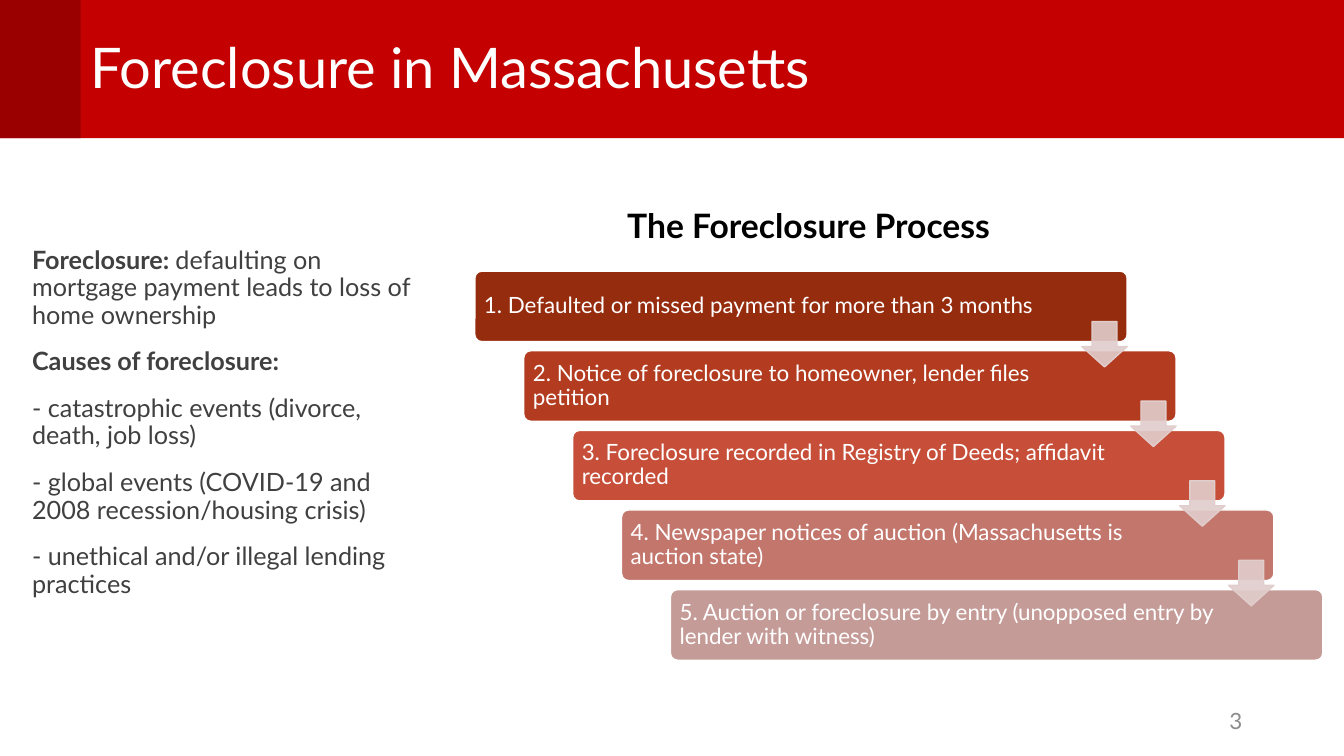
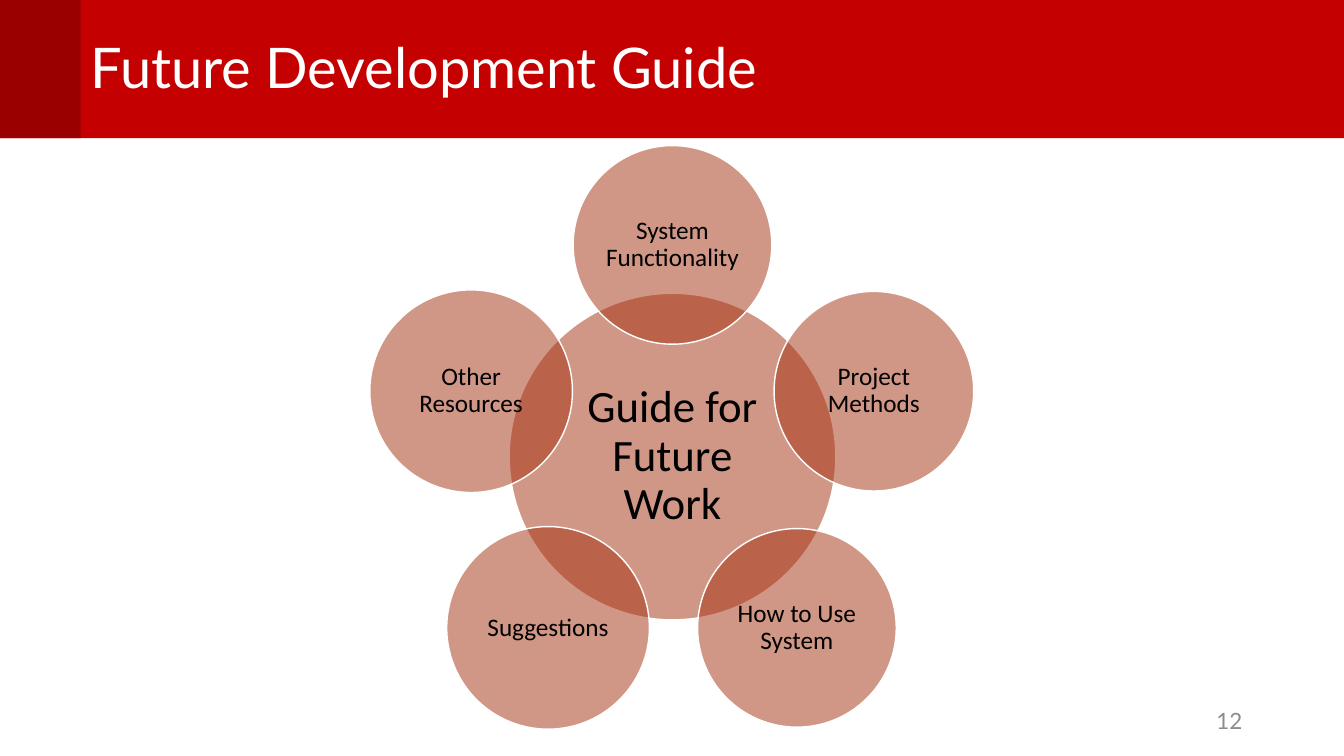
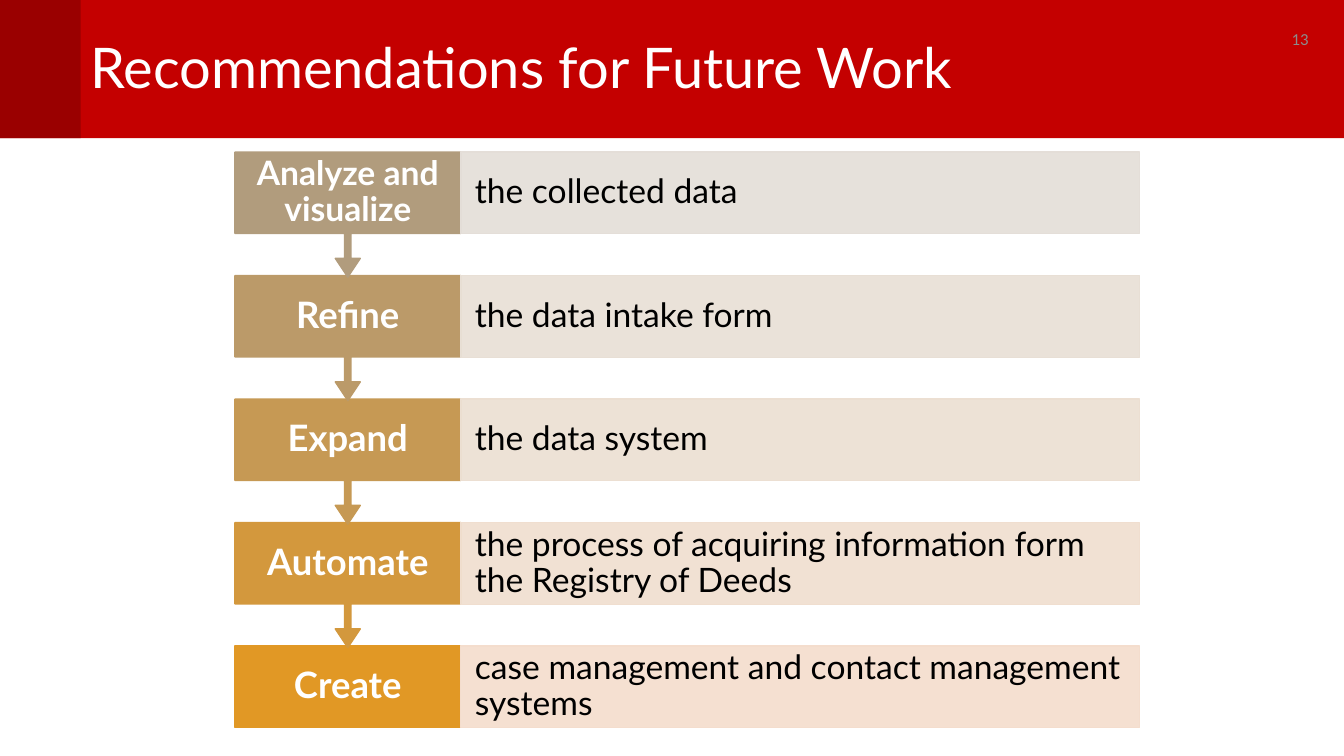
import math
from dataclasses import dataclass

from lxml import etree
from pptx import Presentation
from pptx import util as u
from pptx.dml.color import RGBColor
from pptx.enum import shapes, text
from pptx.oxml import ns
from pptx.shapes.autoshape import Shape
from pptx.slide import Slide
from pptx.util import Inches

COLORS = {
    "band": "C40000",
    "band_corner": "9A0000",
    "white": "FFFFFF",
    "black": "000000",
    "body": "404040",
    "number": "8C8C8C",
    "step_arrow": "E1CDCC",
    "circle": "A5300F",
}
SHAPE = shapes.MSO_SHAPE
LEFT, CENTER, RIGHT = text.PP_ALIGN.LEFT, text.PP_ALIGN.CENTER, text.PP_ALIGN.RIGHT
MIDDLE, TOP = text.MSO_ANCHOR.MIDDLE, text.MSO_ANCHOR.TOP


@dataclass(frozen=True)
class Box:
    left: float
    top: float
    width: float
    height: float

    def lengths(self) -> list[int]:
        return [Inches(v) for v in (self.left, self.top, self.width, self.height)]


@dataclass(frozen=True)
class TextStyle:
    size: float
    color: str = COLORS["black"]
    font: str = "Lato"
    bold: bool = False
    align: text.PP_ALIGN = LEFT
    anchor: text.MSO_ANCHOR = MIDDLE
    line_spacing: float = 0.9
    margins: tuple[float, float, float, float] = (0.1, 0.05, 0.1, 0.05)


@dataclass(frozen=True)
class Step:
    label: str
    fill: str


@dataclass(frozen=True)
class Topic:
    label: str
    diameter: float


@dataclass(frozen=True)
class Recommendation:
    verb: str
    detail: str
    verb_fill: str
    detail_fill: str
    verb_size: float = 26


TITLE = TextStyle(40, COLORS["white"])
NUMBER = TextStyle(16, COLORS["number"], align=RIGHT, line_spacing=1)
NUMBER_BOX = Box(9.42, 6.95, 3, 0.4)


# Shared helpers
def format_run(run, style: TextStyle, bold: bool) -> None:
    run.font.size = u.Pt(style.size)
    run.font.name = style.font
    run.font.bold = bold
    run.font.color.rgb = RGBColor.from_string(style.color)


def set_frame(shape: Shape, style: TextStyle):
    frame = shape.text_frame
    frame.word_wrap = True
    frame.vertical_anchor = style.anchor
    (frame.margin_left, frame.margin_top,
     frame.margin_right, frame.margin_bottom) = map(Inches, style.margins)
    return frame


def write(shape: Shape, content: str, style: TextStyle) -> None:
    frame = set_frame(shape, style)
    frame.text = content
    paragraph = frame.paragraphs[0]
    paragraph.alignment = style.align
    paragraph.line_spacing = style.line_spacing
    for run in paragraph.runs:
        format_run(run, style, style.bold)


def add_text(slide: Slide, box: Box, content: str, style: TextStyle) -> None:
    write(slide.shapes.add_textbox(*box.lengths()), content, style)


def add_filled(slide: Slide, kind: SHAPE, box: Box, fill: str, line: str | None = None,
               opacity: int = 100, adjustments: tuple[float, ...] = ()) -> Shape:
    shape = slide.shapes.add_shape(kind, *box.lengths())
    shape.shadow.inherit = False
    shape.fill.solid()
    shape.fill.fore_color.rgb = RGBColor.from_string(fill)
    if opacity < 100:
        color = shape._element.spPr.find(ns.qn("a:solidFill")).find(ns.qn("a:srgbClr"))
        etree.SubElement(color, ns.qn("a:alpha")).set("val", str(opacity * 1000))
    if line:
        shape.line.color.rgb = RGBColor.from_string(line)
        shape.line.width = u.Pt(1)
    else:
        shape.line.fill.background()
    for index, value in enumerate(adjustments):
        shape.adjustments[index] = value
    return shape


def add_slide(presentation, title: str, number: str, number_box: Box = NUMBER_BOX,
              number_style: TextStyle = NUMBER) -> Slide:
    slide = presentation.slides.add_slide(presentation.slide_layouts[6])
    add_filled(slide, SHAPE.RECTANGLE, Box(0, 0, 13.33, 1.37), COLORS["band"])
    add_filled(slide, SHAPE.RECTANGLE, Box(0, 0, 0.8, 1.37), COLORS["band_corner"])
    add_text(slide, Box(0.8, 0.07, 12.33, 1.25), title, TITLE)
    add_text(slide, number_box, number, number_style)
    return slide


# Foreclosure process: definition on the left, staircase on the right
DEFINITION = [
    ("Foreclosure: ", "defaulting on mortgage payment leads to loss of home ownership"),
    ("Causes of foreclosure:", ""),
    ("", "- catastrophic events (divorce, death, job loss)"),
    ("", "- global events (COVID-19 and 2008 recession/housing crisis)"),
    ("", "- unethical and/or illegal lending practices"),
]
STEPS = [
    Step("1. Defaulted or missed payment for more than 3 months", "962C0E"),
    Step("2. Notice of foreclosure to homeowner, lender files petition", "B23B20"),
    Step("3. Foreclosure recorded in Registry of Deeds; affidavit recorded", "C74F39"),
    Step("4. Newspaper notices of auction (Massachusetts is auction state)", "C3766C"),
    Step("5. Auction or foreclosure by entry (unopposed entry by lender with witness)",
         "C59B98"),
]


def add_definition(slide: Slide) -> None:
    style = TextStyle(18, COLORS["body"], anchor=TOP, margins=(0.1, 0.05, 0, 0.05))
    frame = set_frame(slide.shapes.add_textbox(*Box(0.22, 2.41, 3.87, 3.6).lengths()), style)
    for index, parts in enumerate(DEFINITION):
        paragraph = frame.add_paragraph() if index else frame.paragraphs[0]
        paragraph.line_spacing = style.line_spacing
        paragraph.space_before, paragraph.space_after = u.Pt(12), u.Pt(2)
        for part, bold in zip(parts, (True, False)):
            if part:
                run = paragraph.add_run()
                run.text = part
                format_run(run, style, bold)


def build_process(presentation) -> None:
    slide = add_slide(presentation, "Foreclosure in Massachusetts", "3")
    add_definition(slide)
    add_text(slide, Box(4.76, 1.98, 6.52, 0.5), "The Foreclosure Process",
             TextStyle(24, bold=True, align=CENTER, line_spacing=1))

    label = TextStyle(16, COLORS["white"], margins=(0.07, 0.05, 0.86, 0.05))
    bars = [Box(4.71 + 0.485 * i, 2.69 + 0.79 * i, 6.47, 0.7) for i in range(len(STEPS))]
    for step, bar in zip(STEPS, bars):
        shape = add_filled(slide, SHAPE.ROUNDED_RECTANGLE, bar, step.fill,
                           COLORS["white"], adjustments=(0.1,))
        write(shape, step.label, label)
    for bar in bars[:-1]:
        add_filled(slide, SHAPE.DOWN_ARROW, Box(bar.left + 6.02, bar.top + 0.5, 0.45, 0.45),
                   COLORS["step_arrow"], COLORS["step_arrow"], 90, (0.55, 0.45))


# Development guide: five topics evenly spaced around a hub
HUB = Topic("Guide for Future Work", 3.24)
TOPICS = [
    Topic("System Functionality", 1.97),
    Topic("Project Methods", 1.98),
    Topic("How to Use System", 1.97),
    Topic("Suggestions", 2.01),
    Topic("Other Resources", 2.01),
]


def add_circle(slide: Slide, topic: Topic, x: float, y: float, size: float) -> None:
    box = Box(x - topic.diameter / 2, y - topic.diameter / 2, topic.diameter, topic.diameter)
    shape = add_filled(slide, SHAPE.OVAL, box, COLORS["circle"], COLORS["white"], 50)
    write(shape, topic.label, TextStyle(size, font="Calibri", align=CENTER,
                                        margins=(0.03, 0.03, 0.03, 0.03)))


def build_guide(presentation) -> None:
    slide = add_slide(presentation, "Future Development Guide", "12")
    center_x, center_y, orbit = 6.67, 4.53, 2.1
    add_circle(slide, HUB, center_x, center_y, 32)
    for index, topic in enumerate(TOPICS):
        angle = math.tau * index / len(TOPICS)
        add_circle(slide, topic, center_x + orbit * math.sin(angle),
                   center_y - orbit * math.cos(angle), 18)


# Recommendations: a verb column of callouts with a detail beside each
RECOMMENDATIONS = [
    Recommendation("Analyze and visualize", "the collected data", "B19C7D", "E4DED8", 24),
    Recommendation("Refine", "the data intake form", "BB9A69", "E8DFD5"),
    Recommendation("Expand", "the data system", "C69954", "ECDFD2"),
    Recommendation("Automate", "the process of acquiring information form the Registry of Deeds",
                   "D3983D", "F0DECF"),
    Recommendation("Create", "case management and contact management systems",
                   "E19825", "F4DDCD"),
]


def build_recommendations(presentation) -> None:
    slide = add_slide(presentation, "Recommendations for Future Work", "13",
                      Box(12.45, 0, 0.89, 0.77),
                      TextStyle(12, COLORS["number"], "Calibri", align=CENTER, line_spacing=1))
    last = len(RECOMMENDATIONS) - 1
    # Bottom row first, so each arrow tip lies over the row below it
    for index, item in reversed(list(enumerate(RECOMMENDATIONS))):
        top = 1.51 + 1.225 * index
        if index == last:
            verb = add_filled(slide, SHAPE.RECTANGLE, Box(2.33, top, 2.24, 0.81),
                              item.verb_fill, item.verb_fill)
        else:
            verb = add_filled(slide, SHAPE.DOWN_ARROW_CALLOUT, Box(2.33, top, 2.24, 1.24),
                              item.verb_fill, item.verb_fill,
                              adjustments=(0.05, 0.1, 0.15, 0.65))
        write(verb, item.verb, TextStyle(item.verb_size, COLORS["white"], bold=True,
                                         align=CENTER, margins=(0.16, 0.05, 0.16, 0.05)))
        detail = add_filled(slide, SHAPE.RECTANGLE, Box(4.57, top, 6.73, 0.81),
                            item.detail_fill, item.detail_fill, 90)
        write(detail, item.detail, TextStyle(24, margins=(0.14, 0.05, 0.14, 0.05)))


def main() -> None:
    presentation = Presentation()
    presentation.slide_width, presentation.slide_height = Inches(13.33), Inches(7.5)
    build_process(presentation)
    build_guide(presentation)
    build_recommendations(presentation)
    presentation.save("out.pptx")


if __name__ == "__main__":
    main()
